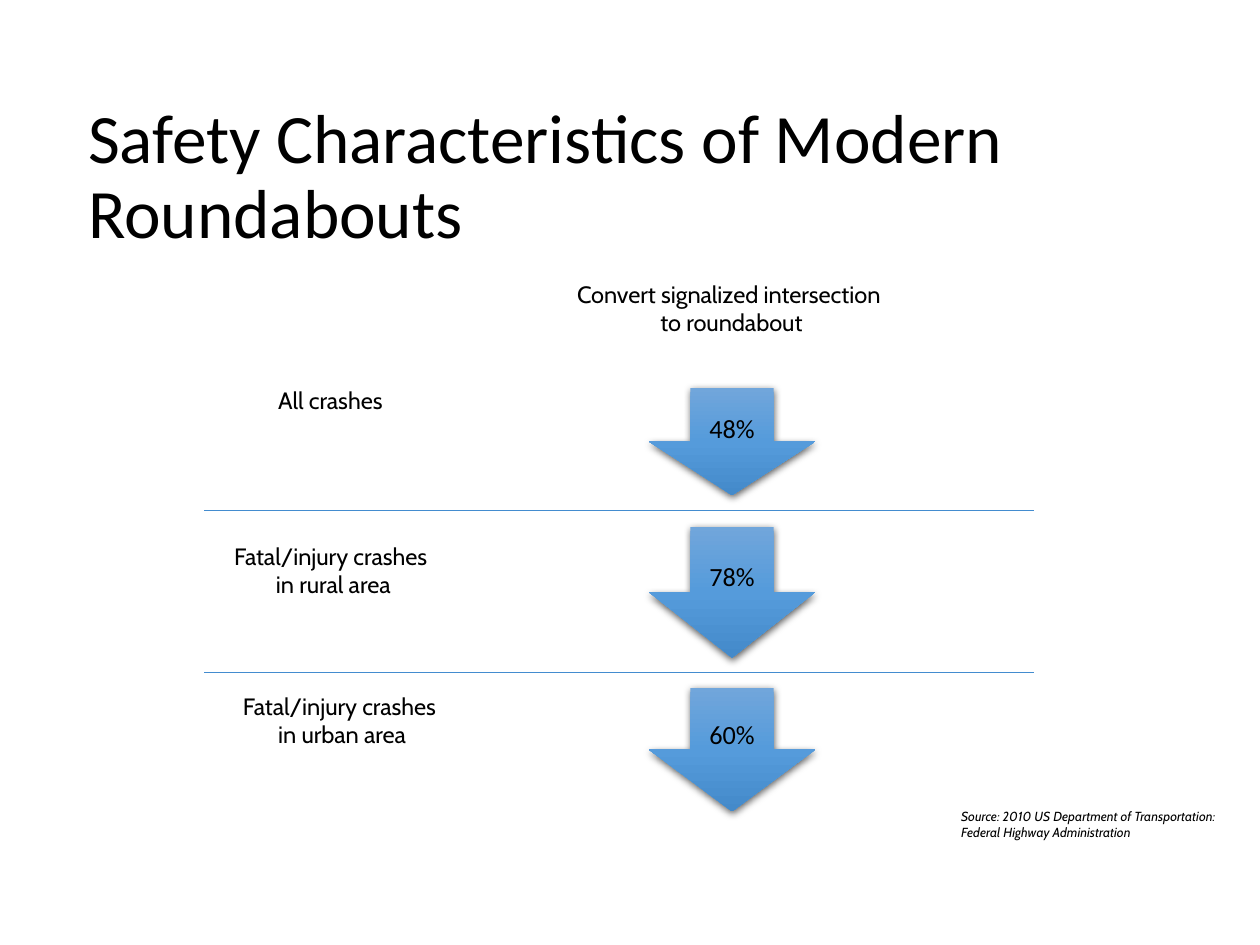
from copy import deepcopy
from dataclasses import dataclass
from typing import Optional

from pptx import Presentation
from pptx.dml.color import RGBColor as Rgb
from pptx.enum.shapes import MSO_CONNECTOR as Conn, MSO_SHAPE as Shape
from pptx.enum.text import MSO_ANCHOR as Anchor, MSO_AUTO_SIZE as Auto, PP_ALIGN as Align
from pptx.oxml import parse_xml
from pptx.oxml.ns import nsdecls, qn
from pptx.util import Pt

SCALE = 9144


@dataclass(frozen=True)
class Theme:
    ink: str = "000000"
    rule: str = "438CCF"
    stops: tuple = ((0, "71A6DB"), (0.5, "559BDB"), (1, "448ACA"))
    head: str = "Calibri"
    body: str = "Cabin"
    title: float = 39.6
    label: float = 13.5
    value: float = 15
    note: float = 7.5
    line: float = 0.5


@dataclass(frozen=True)
class Box:
    x: int
    y: int
    w: int
    h: int

    def emu(self) -> tuple:
        return tuple(px(n) for n in (self.x, self.y, self.w, self.h))


@dataclass(frozen=True)
class Label:
    box: Box
    lines: tuple
    size: float
    font: str
    align: Align = Align.LEFT
    wrap: bool = False
    slant: bool = False


@dataclass(frozen=True)
class Row:
    label: Label
    value: str
    top: int
    high: int
    rule: Optional[int] = None


THEME = Theme()


def px(n: int) -> int:
    return n * SCALE


def write(frame, lines: tuple, size: float, font: str, align: Align, slant: bool = False) -> None:
    for i, line in enumerate(lines):
        para = frame.paragraphs[0] if i == 0 else frame.add_paragraph()
        para.alignment = align
        run = para.add_run()
        run.text = line
        run.font.size = Pt(size)
        run.font.name = font
        run.font.italic = slant
        run.font.color.rgb = Rgb.from_string(THEME.ink)


def add_label(slide, item: Label):
    frame = slide.shapes.add_textbox(*item.box.emu()).text_frame
    frame.word_wrap = item.wrap
    frame.auto_size = Auto.SHAPE_TO_FIT_TEXT
    write(frame, item.lines, item.size, item.font, item.align, item.slant)
    return frame


def add_title(slide, item: Label) -> None:
    frame = add_label(slide, item)
    frame.auto_size = Auto.NONE
    frame.vertical_anchor = Anchor.MIDDLE
    frame.paragraphs[0].line_spacing = 0.9


def add_arrow(slide, box: Box, value: str) -> None:
    arrow = slide.shapes.add_shape(Shape.DOWN_ARROW, *box.emu())
    arrow.line.fill.background()
    arrow.fill.gradient()
    arrow.fill.gradient_angle = 270
    props = arrow._element.spPr
    stops = props.find(qn("a:gradFill")).find(qn("a:gsLst"))
    stops.insert(1, deepcopy(stops[0]))
    for stop, (pos, color) in zip(arrow.fill.gradient_stops, THEME.stops):
        stop.position = pos
        stop.color.rgb = Rgb.from_string(color)
    arrow.shadow.inherit = False
    props.find(qn("a:effectLst")).append(parse_xml(
        f'<a:outerShdw {nsdecls("a")} blurRad="{Pt(4.5)}" dist="{Pt(1.5)}" '
        'dir="5400000" algn="ctr" rotWithShape="0">'
        '<a:srgbClr val="000000"><a:alpha val="63000"/></a:srgbClr></a:outerShdw>'))
    frame = arrow.text_frame
    frame.vertical_anchor = Anchor.MIDDLE
    write(frame, (value,), THEME.value, THEME.head, Align.CENTER)


def add_rule(slide, y: int) -> None:
    rule = slide.shapes.add_connector(Conn.STRAIGHT, px(162), px(y), px(821), px(y))
    rule.line.color.rgb = Rgb.from_string(THEME.rule)
    rule.line.width = Pt(THEME.line)
    rule._element.spPr.append(parse_xml(f'<a:effectLst {nsdecls("a")}/>'))


def pair(x: int, y: int, w: int, *lines: str) -> Label:
    return Label(Box(x, y, w, 56), lines, THEME.label, THEME.body, Align.CENTER)


TITLE = Label(Box(60, 87, 862, 109), ("Safety Characteristics of Modern Roundabouts",),
              THEME.title, THEME.head, wrap=True)
HEAD = pair(440, 217, 281, "Convert signalized intersection ", "to roundabout")
NOTE = Label(Box(753, 637, 243, 35),
             ("Source: 2010 US Department of Transportation: Federal Highway Administration",),
             THEME.note, THEME.body, wrap=True, slant=True)
ROWS = (
    Row(Label(Box(211, 301, 109, 33), ("All crashes",), THEME.label, THEME.body),
        "48%", 308, 85, 405),
    Row(pair(170, 425, 189, "Fatal/injury crashes ", "in rural area"), "78%", 418, 104, 534),
    Row(pair(177, 544, 189, "Fatal/injury crashes ", "in urban area"), "60%", 546, 98),
)


def main() -> None:
    deck = Presentation()
    deck.slide_width, deck.slide_height = px(1000), px(750)
    slide = deck.slides.add_slide(deck.slide_layouts[6])
    add_title(slide, TITLE)
    add_label(slide, HEAD)
    for row in ROWS:
        add_label(slide, row.label)
        add_arrow(slide, Box(515, row.top, 132, row.high), row.value)
        if row.rule is not None:
            add_rule(slide, row.rule)
    add_label(slide, NOTE)
    deck.save("out.pptx")


if __name__ == "__main__":
    main()
